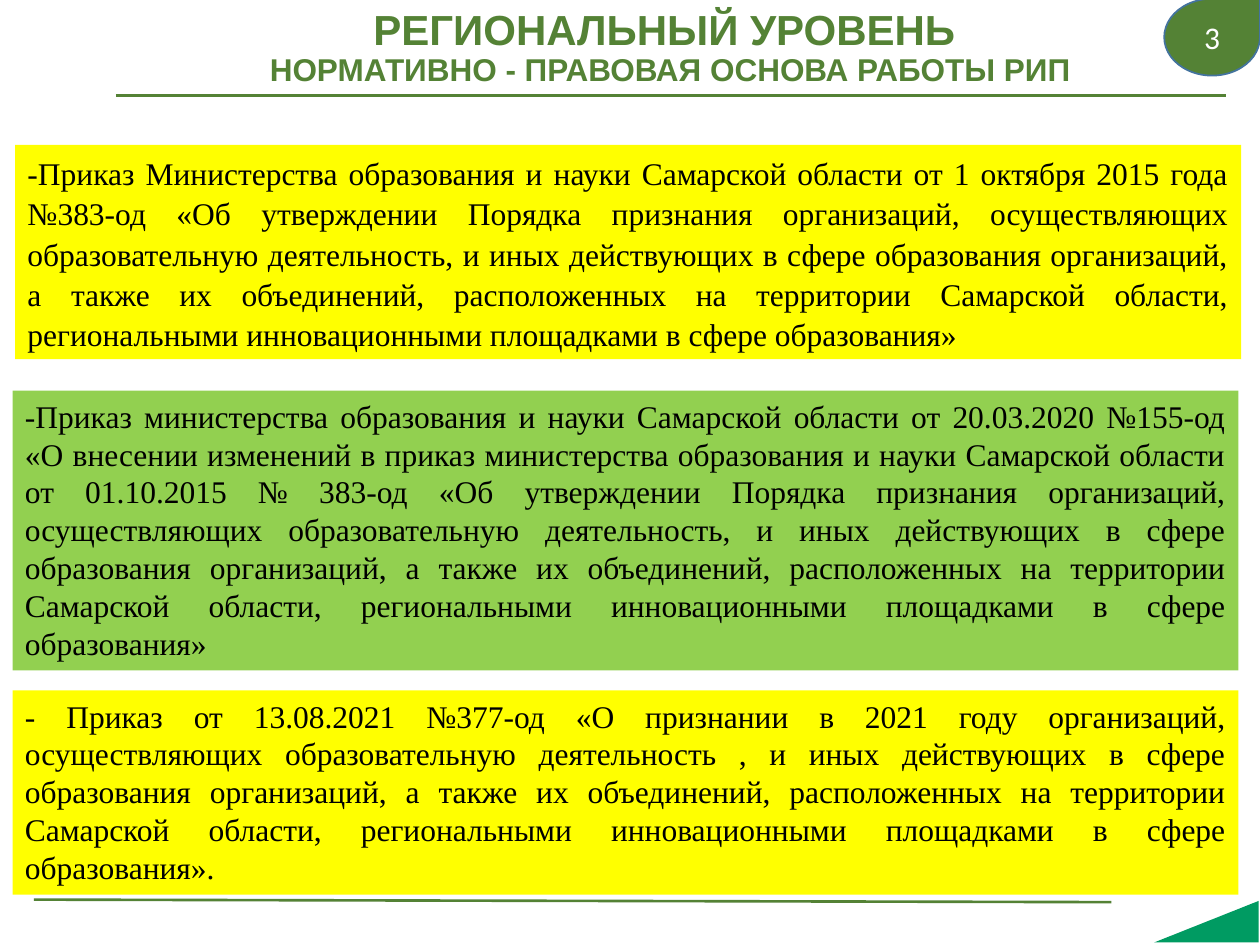
import pptx
import pptx.dml.color
import pptx.enum.shapes
import pptx.enum.text
import pptx.oxml.ns
import pptx.util
from lxml import etree

Pt = pptx.util.Pt
RGBColor = pptx.dml.color.RGBColor
SHAPE = pptx.enum.shapes.MSO_SHAPE
ALIGN = pptx.enum.text.PP_ALIGN
ANCHOR = pptx.enum.text.MSO_ANCHOR
AUTO_SIZE = pptx.enum.text.MSO_AUTO_SIZE

DARK_GREEN = RGBColor(0x54, 0x82, 0x35)
LIGHT_GREEN = RGBColor(0x92, 0xD0, 0x50)
CORNER_GREEN = RGBColor(0x00, 0x9B, 0x62)
YELLOW = RGBColor(0xFF, 0xFF, 0x00)
OUTLINE_BLUE = RGBColor(0x43, 0x73, 0x9E)
BLACK = RGBColor(0, 0, 0)
WHITE = RGBColor(0xFF, 0xFF, 0xFF)

ORDER_FONT = {"name": "Times New Roman", "size": Pt(18)}
NUMBER_FONT = {"name": "Calibri", "size": Pt(18)}
TITLE_FONT = {"name": "Arial", "bold": True}

ORDERS = [
    ((8.64, 82.8, 700.56, 122.4), YELLOW,
     {"line_spacing": 1.07, "space_after": Pt(8)},
     "-Приказ Министерства образования и науки Самарской области от 1 октября 2015 года "
     "№383-од «Об утверждении Порядка признания организаций, осуществляющих "
     "образовательную деятельность, и иных действующих в сфере образования организаций, "
     "а также их объединений, расположенных на территории Самарской области, "
     "региональными инновационными площадками в сфере образования»"),
    ((7.2, 223.2, 700.56, 159.84), LIGHT_GREEN, {},
     "-Приказ министерства образования и науки Самарской области от 20.03.2020 №155-од "
     "«О внесении изменений в приказ министерства образования и науки Самарской области "
     "от 01.10.2015 № 383-од «Об утверждении Порядка признания организаций, "
     "осуществляющих образовательную деятельность, и иных действующих в сфере "
     "образования организаций, а также их объединений, расположенных на территории "
     "Самарской области, региональными инновационными площадками в сфере образования»"),
    ((7.2, 394.56, 700.56, 116.64), YELLOW, {},
     "- Приказ от 13.08.2021 №377-од «О признании в 2021 году организаций, "
     "осуществляющих образовательную деятельность , и иных действующих в сфере "
     "образования организаций, а также их объединений, расположенных на территории "
     "Самарской области, региональными инновационными площадками в сфере образования»."),
]


def apply_format(target, values):
    for attribute, value in values.items():
        setattr(target, attribute, value)


def add_run(paragraph, text, font, color):
    run = paragraph.add_run()
    run.text = text
    apply_format(run.font, font)
    run.font.color.rgb = color


def add_rule(slide, x1, y1, x2, y2):
    rule = slide.shapes.add_connector(
        pptx.enum.shapes.MSO_CONNECTOR.STRAIGHT, Pt(x1), Pt(y1), Pt(x2), Pt(y2))
    rule.line.color.rgb = DARK_GREEN
    rule.line.width = Pt(1.5)
    etree.SubElement(rule._element.spPr, pptx.oxml.ns.qn("a:effectLst"))


def add_filled_shape(slide, preset, box, fill):
    figure = slide.shapes.add_shape(preset, *map(Pt, box))
    figure.shadow.inherit = False
    figure.fill.solid()
    figure.fill.fore_color.rgb = fill
    figure.line.fill.background()
    return figure


def add_title(slide):
    title = slide.shapes.add_textbox(Pt(57.6), Pt(3.6), Pt(650.88), Pt(48.24))
    apply_format(title.text_frame, {"word_wrap": True, "vertical_anchor": ANCHOR.MIDDLE})
    heading = title.text_frame.paragraphs[0]
    apply_format(heading, {"alignment": ALIGN.CENTER, "line_spacing": 0.9})
    add_run(heading, "РЕГИОНАЛЬНЫЙ УРОВЕНЬ ", {**TITLE_FONT, "size": Pt(24)}, DARK_GREEN)
    heading.add_line_break()
    add_run(heading, "НОРМАТИВНО - ПРАВОВАЯ ОСНОВА РАБОТЫ РИП",
            {**TITLE_FONT, "size": Pt(18)}, DARK_GREEN)


def add_order(slide, box, fill, spacing, text):
    order = add_filled_shape(slide, SHAPE.RECTANGLE, box, fill)
    apply_format(order.text_frame, {
        "word_wrap": True,
        "vertical_anchor": ANCHOR.TOP,
        "auto_size": AUTO_SIZE.SHAPE_TO_FIT_TEXT,
    })
    paragraph = order.text_frame.paragraphs[0]
    apply_format(paragraph, {"alignment": ALIGN.JUSTIFY, **spacing})
    add_run(paragraph, text, ORDER_FONT, BLACK)


def add_slide_number(slide):
    badge = add_filled_shape(slide, SHAPE.TEAR, (665.28, -0.72, 54.72, 43.92), DARK_GREEN)
    badge.line.color.rgb = OUTLINE_BLUE
    badge.line.width = Pt(1)
    badge.text_frame.vertical_anchor = ANCHOR.MIDDLE
    number = badge.text_frame.paragraphs[0]
    number.alignment = ALIGN.CENTER
    add_run(number, "3", NUMBER_FONT, WHITE)


def main():
    deck = pptx.Presentation()
    apply_format(deck, {"slide_width": Pt(720), "slide_height": Pt(540)})
    slide = deck.slides.add_slide(deck.slide_layouts[6])

    add_rule(slide, 66.24, 54.72, 700.56, 54.72)
    add_rule(slide, 19.44, 514.08, 635.04, 515.52)
    corner = add_filled_shape(
        slide, SHAPE.RIGHT_TRIANGLE, (677.52, 496.8, 23.76, 59.76), CORNER_GREEN)
    corner.rotation = 270

    add_title(slide)
    for order in ORDERS:
        add_order(slide, *order)
    add_slide_number(slide)
    deck.save("out.pptx")


if __name__ == "__main__":
    main()
